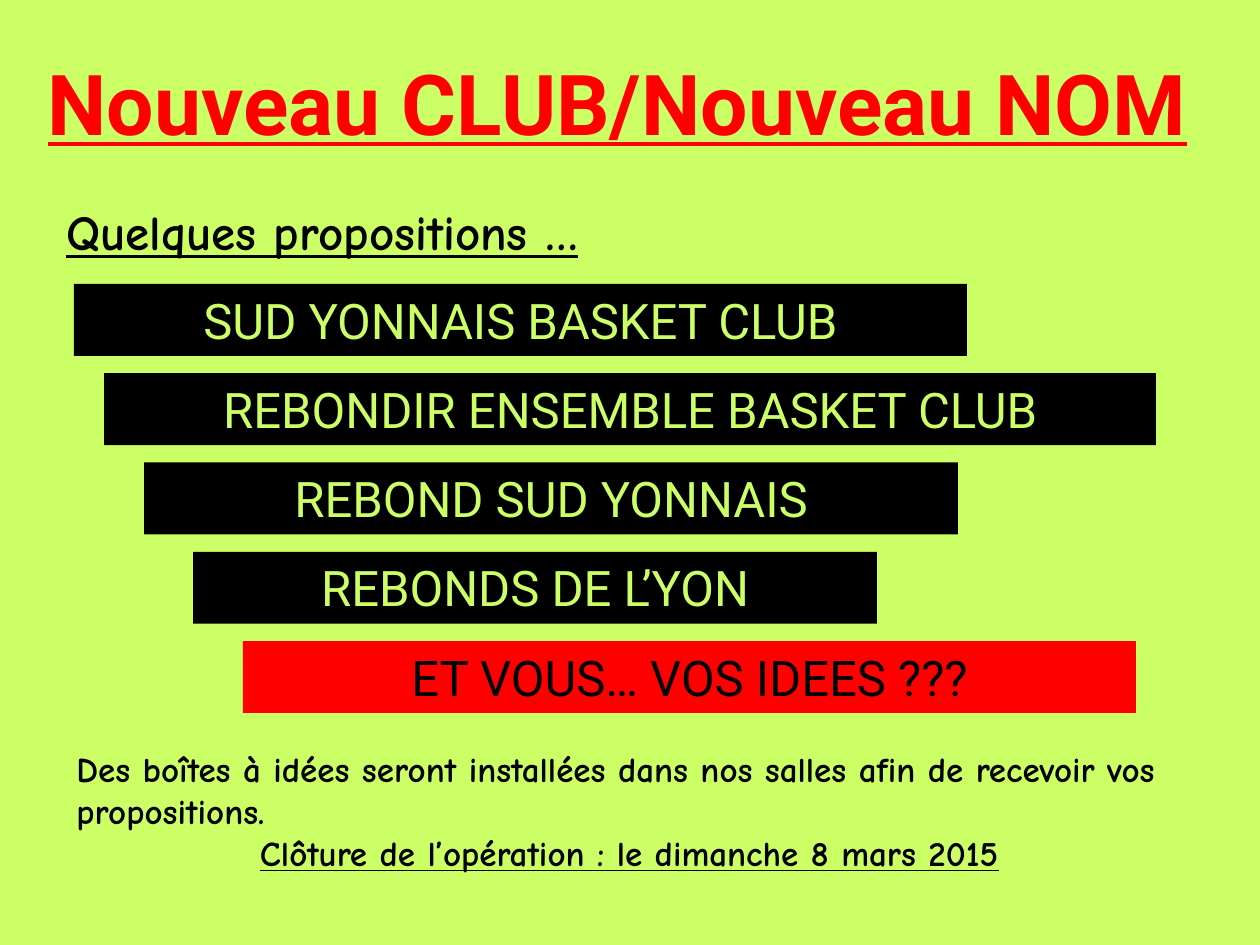
from pptx import Presentation, util as u
from pptx.dml.color import RGBColor
from pptx.enum import shapes, text

SCALE = u.Inches(1) / 126
COLORS = {"lime": "CCFF66", "red": "FF0000", "black": "000000"}
TITLE = {"name": "Roboto", "size": u.Pt(48), "bold": True, "underline": True}
LABEL = {"name": "Comic Neue", "size": u.Pt(28), "bold": True, "underline": True}
BAR = {"name": "Roboto", "size": u.Pt(28)}
NOTE = {"name": "Comic Neue", "size": u.Pt(20), "bold": True}
PROPOSALS = [
    ("SUD YONNAIS BASKET CLUB", 0, 893, "black", "lime"),
    ("REBONDIR ENSEMBLE BASKET CLUB", 30, 1052, "black", "lime"),
    ("REBOND SUD YONNAIS", 70, 814, "black", "lime"),
    ("REBONDS DE L’YON", 119, 684, "black", "lime"),
    ("ET VOUS… VOS IDEES ???", 169, 893, "red", "black"),
]


def px(*lengths):
    """Turn px lengths into EMU."""
    return [u.Emu(round(length * SCALE)) for length in lengths]


def paint(fill, color):
    """Give a fill one solid colour."""
    fill.solid()
    fill.fore_color.rgb = RGBColor.from_string(COLORS[color])


def write(para, words, style, color, align=text.PP_ALIGN.LEFT):
    """Write one formatted span in a paragraph."""
    para.alignment = align
    span = para.add_run()
    span.text = words
    for name, value in style.items():
        setattr(span.font, name, value)
    span.font.color.rgb = RGBColor.from_string(COLORS[color])


def add_title(page, box):
    """Place the heading in the title placeholder."""
    title = page.shapes.title
    for name, value in zip(("left", "top", "width", "height"), px(*box)):
        setattr(title, name, value)
    frame = title.text_frame
    frame.auto_size = text.MSO_AUTO_SIZE.NONE
    frame.vertical_anchor = text.MSO_ANCHOR.TOP
    write(frame.paragraphs[0], "Nouveau CLUB/Nouveau NOM", TITLE, "red")


def add_text(page, box):
    """Add a wrapping text box and return its frame."""
    frame = page.shapes.add_textbox(*px(*box)).text_frame
    frame.word_wrap = True
    frame.auto_size = text.MSO_AUTO_SIZE.SHAPE_TO_FIT_TEXT
    return frame


def add_label(page, box):
    """Introduce the proposals."""
    frame = add_text(page, box)
    write(frame.paragraphs[0], "Quelques propositions …", LABEL, "black")


def add_proposals(page, box, bar_height=72):
    """Spread the staggered bars evenly down the box."""
    left, top, _, height = box
    step = (height - bar_height) / (len(PROPOSALS) - 1)
    for row, (words, indent, width, fill, color) in enumerate(PROPOSALS):
        bar = page.shapes.add_shape(
            shapes.MSO_SHAPE.RECTANGLE,
            *px(left + indent, top + row * step, width, bar_height))
        bar.shadow.inherit = False
        bar.line.fill.background()
        paint(bar.fill, fill)
        frame = bar.text_frame
        frame.word_wrap = True
        frame.vertical_anchor = text.MSO_ANCHOR.TOP
        write(frame.paragraphs[0], words, BAR, color, text.PP_ALIGN.CENTER)


def add_closing(page, box):
    """Explain how to take part and until when."""
    frame = add_text(page, box)
    write(frame.paragraphs[0],
          "Des boîtes à idées seront installées dans nos salles afin de "
          "recevoir vos propositions.", NOTE, "black")
    write(frame.add_paragraph(),
          "Clôture de l’opération : le dimanche 8 mars 2015",
          {**NOTE, "underline": True}, "black", text.PP_ALIGN.CENTER)


def main():
    """Build and save the deck."""
    deck = Presentation()
    deck.slide_width, deck.slide_height = px(1260, 945)
    page = deck.slides.add_slide(deck.slide_layouts[5])
    paint(page.background.fill, "lime")
    add_title(page, (35, 45, 1191, 115))
    add_label(page, (54, 195, 595, 72))
    add_proposals(page, (74, 284, 1082, 429))
    add_closing(page, (64, 741, 1131, 140))
    deck.save("out.pptx")


if __name__ == "__main__":
    main()
